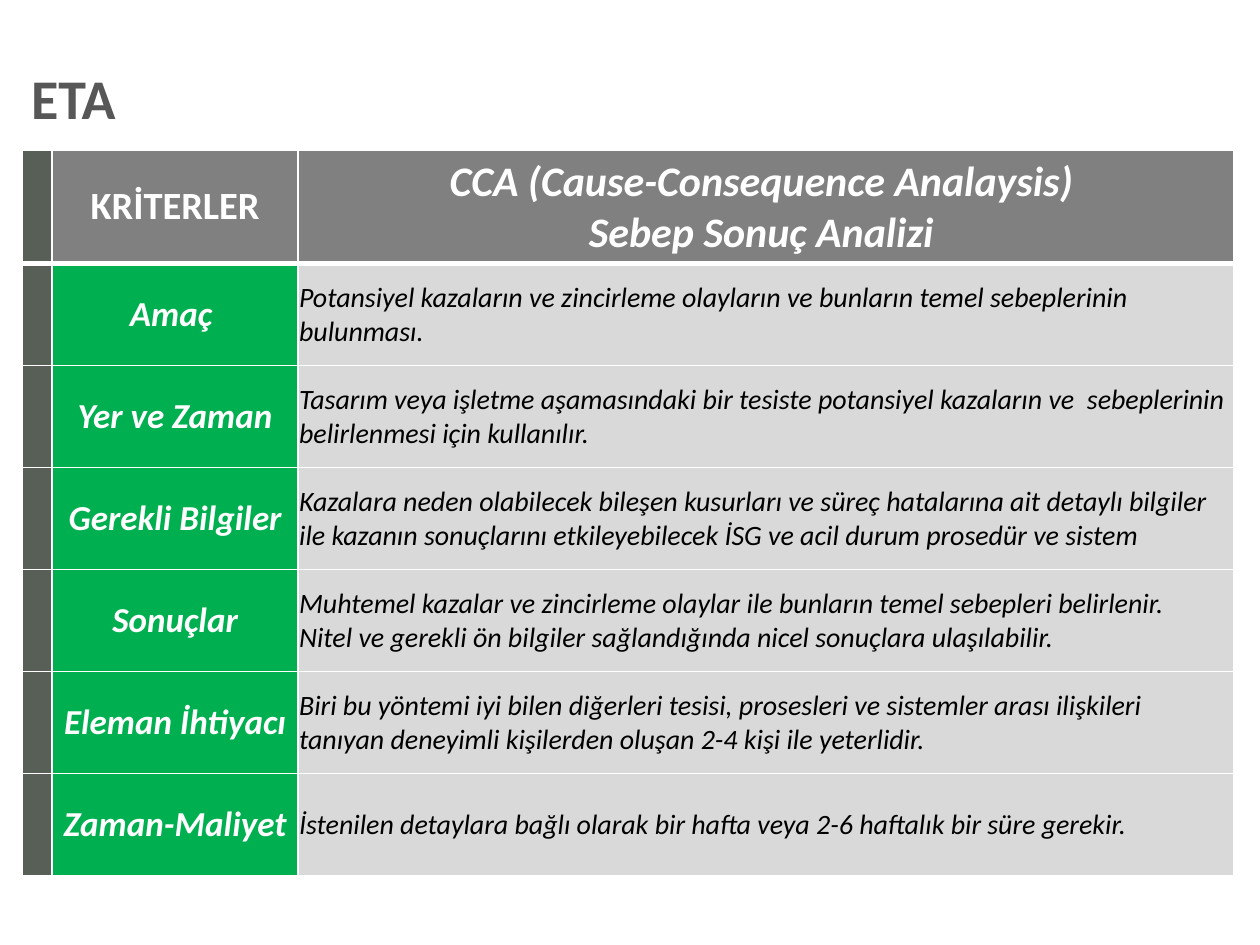
from lxml.etree import SubElement
from pptx import Presentation
from pptx.dml.color import RGBColor
from pptx.enum.text import MSO_ANCHOR as Anchor, PP_ALIGN as Align
from pptx.oxml.ns import qn
from pptx.util import Pt

EMU_PER_PX = 914400 / 126
WHITE, GRAY, BLACK = "FFFFFF", "575757", "000000"
STRIPE, HEADER, GREEN, LIGHT = "575F57", "808080", "00B050", "D9D9D9"

COLUMNS = [29, 246, 936]
HEADER_HEIGHT, ROW_HEIGHT = 112, 102
HEADINGS = ["KRİTERLER", ["CCA (Cause-Consequence Analaysis) ", "Sebep Sonuç Analizi "]]
CRITERIA = [
    ("Amaç ", ["Potansiyel kazaların ve zincirleme olayların ve bunların temel "
               "sebeplerinin bulunması."]),
    ("Yer ve Zaman", ["Tasarım veya işletme aşamasındaki bir tesiste potansiyel kazaların ve  "
                      "sebeplerinin belirlenmesi için kullanılır."]),
    ("Gerekli Bilgiler", ["Kazalara neden olabilecek bileşen kusurları ve süreç hatalarına ait "
                          "detaylı bilgiler ile kazanın sonuçlarını etkileyebilecek İSG ve acil "
                          "durum prosedür ve sistem"]),
    ("Sonuçlar", ["Muhtemel kazalar ve zincirleme olaylar ile bunların temel sebepleri belirlenir.",
                  "Nitel ve gerekli ön bilgiler sağlandığında nicel sonuçlara ulaşılabilir."]),
    ("Eleman İhtiyacı", ["Biri bu yöntemi iyi bilen diğerleri tesisi, prosesleri ve sistemler "
                         "arası ilişkileri tanıyan deneyimli kişilerden oluşan 2-4 kişi ile "
                         "yeterlidir."]),
    ("Zaman-Maliyet", ["İstenilen detaylara bağlı olarak bir hafta veya 2-6 haftalık bir süre "
                       "gerekir."]),
]


def px(length):
    return round(length * EMU_PER_PX)


def rgb(value):
    return RGBColor.from_string(value)


def set_format(target, values):
    for name, value in values.items():
        setattr(target, name, value)


def add_run(paragraph, text, color, size, **values):
    run = paragraph.add_run()
    run.text = text
    set_format(run.font, {"name": "Calibri", "size": Pt(size), **values})
    run.font.color.rgb = rgb(color)


def add_title(slide, text, left, top, width, height):
    frame = slide.shapes.add_textbox(*map(px, (left, top, width, height))).text_frame
    set_format(frame, {"word_wrap": True, "margin_left": 0, "margin_right": 0,
                       "vertical_anchor": Anchor.MIDDLE})
    paragraph = frame.paragraphs[0]
    paragraph.line_spacing = 0.9
    add_run(paragraph, text, GRAY, 32, bold=True)


def style_cell(cell, fill, top=1, bottom=1):
    """Draw white borders, then the fill, which must follow them in the XML."""
    properties = cell._tc.get_or_add_tcPr()
    for side, width in zip("LRTB", (1, 1, top, bottom)):
        line = SubElement(properties, qn(f"a:ln{side}"), w=str(Pt(width)))
        solid = SubElement(line, qn("a:solidFill"))
        SubElement(solid, qn("a:srgbClr"), val=WHITE)
    cell.fill.solid()
    cell.fill.fore_color.rgb = rgb(fill)


def write_cell(cell, lines, alignment, color, size, **values):
    cell.vertical_anchor = Anchor.MIDDLE
    frame = cell.text_frame
    for index, text in enumerate(lines):
        paragraph = frame.add_paragraph() if index else frame.paragraphs[0]
        paragraph.alignment = alignment
        add_run(paragraph, text, color, size, **values)


def add_criteria_table(slide, left, top):
    row_heights = [HEADER_HEIGHT] + [ROW_HEIGHT] * len(CRITERIA)
    table = slide.shapes.add_table(
        len(row_heights), len(COLUMNS), px(left), px(top),
        px(sum(COLUMNS)), px(sum(row_heights))).table
    for column, width in zip(table.columns, COLUMNS):
        column.width = px(width)
    for row, height in zip(table.rows, row_heights):
        row.height = px(height)

    for cell, fill in zip(table.rows[0].cells, (STRIPE, HEADER, HEADER)):
        style_cell(cell, fill, bottom=3)
    write_cell(table.cell(0, 1), [HEADINGS[0]], Align.CENTER, WHITE, 22, bold=True, italic=False)
    write_cell(table.cell(0, 2), HEADINGS[1], Align.CENTER, WHITE, 24, bold=True, italic=True)

    margins = {"margin_left": px(1), "margin_right": px(1), "margin_top": px(1),
               "margin_bottom": 0}
    for index, (criterion, description) in enumerate(CRITERIA, 1):
        cells = table.rows[index].cells
        for cell, fill in zip(cells, (STRIPE, GREEN, LIGHT)):
            style_cell(cell, fill, top=3 if index == 1 else 1)
        for cell in (cells[1], cells[2]):
            set_format(cell, margins)
        write_cell(cells[1], [criterion], Align.CENTER, WHITE, 20, bold=True, italic=True)
        write_cell(cells[2], description, Align.LEFT, BLACK, 16, bold=False, italic=True)


def main():
    presentation = Presentation()
    set_format(presentation, {"slide_width": px(1260), "slide_height": px(945)})
    slide = presentation.slides.add_slide(presentation.slide_layouts[6])
    add_title(slide, "ETA", 31, 57, 1215, 89)
    add_criteria_table(slide, 22, 150)
    presentation.save("out.pptx")


if __name__ == "__main__":
    main()
